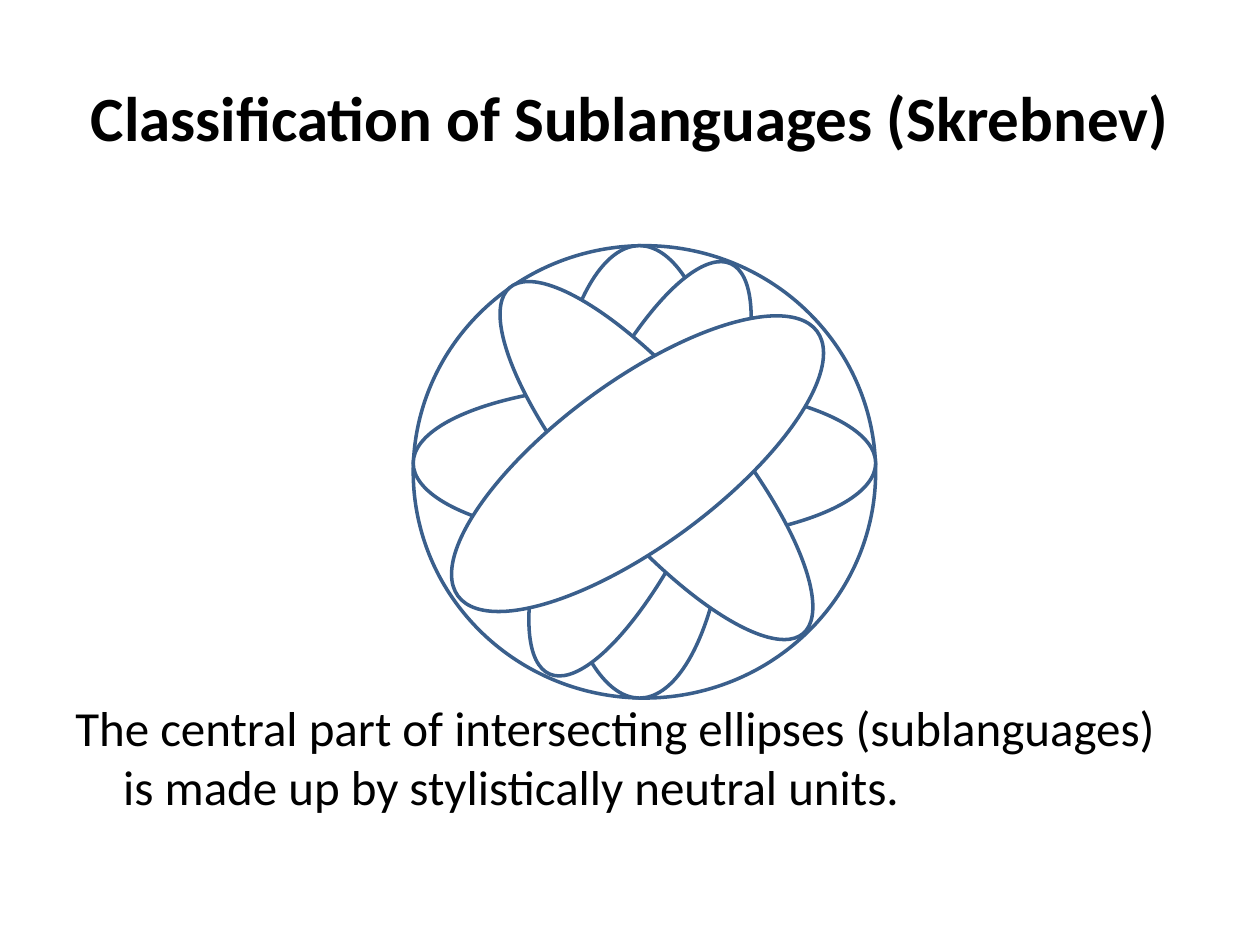
from pptx import Presentation
from pptx.dml.color import RGBColor
from pptx.enum.shapes import MSO_SHAPE
from pptx.enum.text import MSO_ANCHOR, PP_ALIGN
from pptx.util import Inches, Pt

BLACK = RGBColor(0x00, 0x00, 0x00)
WHITE = RGBColor(0xFF, 0xFF, 0xFF)
BLUE = RGBColor(0x3A, 0x5F, 0x8C)

TITLE = "Classification of Sublanguages (Skrebnev)"
CONCLUSION = ("The central part of intersecting ellipses (sublanguages) "
              "is made up by stylistically neutral units.")

# left, top, width, height, rotation; the enclosing language circle comes first
ELLIPSES = [
    (3.28, 1.95, 3.67, 3.59, 0),
    (4.37, 1.95, 1.41, 3.59, 0),
    (3.28, 3.05, 3.67, 1.25, 0),
    (3.3, 3.16, 3.56, 1.12, 293.8),
    (3.41, 3.09, 3.6, 1.13, 229.7),
    (3.29, 3.03, 3.54, 1.3, 323.6),
]
HANGING_INDENT = Inches(0.38)


def write(shape, text, size, bold=False, align=PP_ALIGN.LEFT,
          anchor=MSO_ANCHOR.TOP):
    frame = shape.text_frame
    frame.word_wrap = True
    frame.vertical_anchor = anchor
    paragraph = frame.paragraphs[0]
    paragraph.alignment = align
    run = paragraph.add_run()
    run.text = text
    run.font.name = "Calibri"
    run.font.size = Pt(size)
    run.font.bold = bold
    run.font.color.rgb = BLACK
    return paragraph


def add_ellipse(slide, left, top, width, height, rotation):
    ellipse = slide.shapes.add_shape(
        MSO_SHAPE.OVAL, Inches(left), Inches(top), Inches(width), Inches(height))
    ellipse.rotation = rotation
    ellipse.shadow.inherit = False
    ellipse.fill.solid()
    ellipse.fill.fore_color.rgb = WHITE
    ellipse.line.color.rgb = BLUE
    ellipse.line.width = Pt(2)


def main():
    deck = Presentation()
    deck.slide_width, deck.slide_height = Inches(10), Inches(7.5)
    slide = deck.slides.add_slide(deck.slide_layouts[5])

    title = slide.shapes.title
    title.left, title.top = Inches(0.5), Inches(0.3)
    title.width, title.height = Inches(9), Inches(1.25)
    write(title, TITLE, 36, bold=True, align=PP_ALIGN.CENTER,
          anchor=MSO_ANCHOR.MIDDLE)

    conclusion = slide.shapes.add_textbox(
        Inches(0.5), Inches(5.49), Inches(9), Inches(1.21))
    paragraph = write(conclusion, CONCLUSION, 28)
    indents = paragraph._p.get_or_add_pPr()
    indents.set("marL", str(HANGING_INDENT))
    indents.set("indent", str(-HANGING_INDENT))

    for ellipse in ELLIPSES:
        add_ellipse(slide, *ellipse)

    deck.save("out.pptx")


if __name__ == "__main__":
    main()
